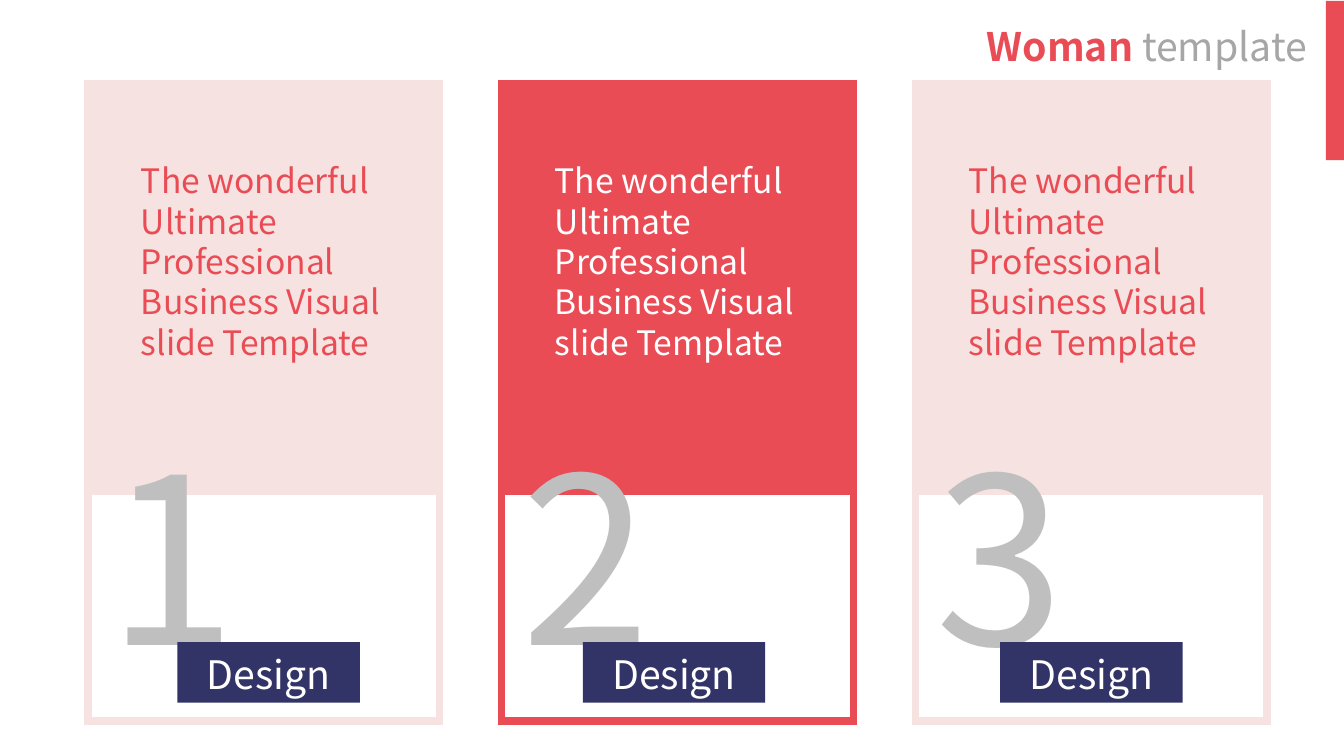
"""Build a slide with three numbered design cards under a two-tone heading."""
from dataclasses import dataclass

import lxml.etree
import pptx
import pptx.dml.color
import pptx.enum.shapes
import pptx.enum.text
import pptx.oxml.ns
import pptx.shapes.autoshape
import pptx.slide
import pptx.text.text
import pptx.util
from pptx.dml.color import RGBColor
from pptx.util import Inches

FONT = "Noto Sans CJK JP"
CORAL = RGBColor(0xEA, 0x4C, 0x55)
BLUSH = RGBColor(0xF6, 0xE2, 0xE0)
NAVY = RGBColor(0x32, 0x33, 0x66)
WHITE = RGBColor(0xFF, 0xFF, 0xFF)
SILVER = RGBColor(0xBF, 0xBF, 0xBF)
GRAY = RGBColor(0xA6, 0xA6, 0xA6)

LEFT_ALIGN = pptx.enum.text.PP_ALIGN.LEFT
CENTER_ALIGN = pptx.enum.text.PP_ALIGN.CENTER
RIGHT_ALIGN = pptx.enum.text.PP_ALIGN.RIGHT

FIRST_CARD_LEFT = 0.87
CARD_PITCH = 4.105
CARD_WIDTH = 3.49
BORDER_POINTS = 5.5
BODY = "The wonderful Ultimate Professional Business Visual slide Template"


@dataclass(frozen=True)
class Area:
    left: float
    top: float
    width: float
    height: float


@dataclass(frozen=True)
class Span:
    text: str
    size: float
    color: RGBColor
    bold: bool = False


@dataclass(frozen=True)
class Card:
    number: str
    panel_color: RGBColor
    body_color: RGBColor
    label_left: float


CARDS = [
    Card("1", BLUSH, CORAL, 1.76),
    Card("2", CORAL, WHITE, 5.78),
    Card("3", BLUSH, CORAL, 9.92),
]


def write(frame: pptx.text.text.TextFrame, spans: list[Span],
          align: pptx.enum.text.PP_ALIGN, wrap: bool) -> None:
    frame.word_wrap = wrap
    frame.auto_size = pptx.enum.text.MSO_AUTO_SIZE.SHAPE_TO_FIT_TEXT
    para = frame.paragraphs[0]
    para.alignment = align
    for span in spans:
        run = para.add_run()
        run.text = span.text
        run.font.name = FONT
        run.font.size = pptx.util.Pt(span.size)
        run.font.bold = span.bold
        run.font.color.rgb = span.color


def add_text(slide: pptx.slide.Slide, area: Area, spans: list[Span],
             align: pptx.enum.text.PP_ALIGN = LEFT_ALIGN, wrap: bool = False) -> None:
    box = slide.shapes.add_textbox(Inches(area.left), Inches(area.top),
                                   Inches(area.width), Inches(area.height))
    write(box.text_frame, spans, align, wrap)


def add_block(slide: pptx.slide.Slide, area: Area, fill: RGBColor,
              border: RGBColor | None = None) -> pptx.shapes.autoshape.Shape:
    block = slide.shapes.add_shape(
        pptx.enum.shapes.MSO_SHAPE.RECTANGLE, Inches(area.left), Inches(area.top),
        Inches(area.width), Inches(area.height))
    block.shadow.inherit = False
    block.fill.solid()
    block.fill.fore_color.rgb = fill
    if border is None:
        block.line.fill.background()
    else:
        block.line.color.rgb = border
        block.line.width = pptx.util.Pt(BORDER_POINTS)
        outline = block.element.spPr.find(pptx.oxml.ns.qn("a:ln"))
        lxml.etree.SubElement(outline, pptx.oxml.ns.qn("a:miter"), lim="800000")
    return block


def add_label(slide: pptx.slide.Slide, left: float) -> None:
    label = add_block(slide, Area(left, 6.37, 1.81, 0.6), NAVY)
    label.text_frame.margin_top = Inches(0.08)
    write(label.text_frame, [Span("Design", 28, WHITE)], CENTER_ALIGN, True)


def add_card(slide: pptx.slide.Slide, card: Card, left: float) -> None:
    add_block(slide, Area(left, 0.83, CARD_WIDTH, 4.02), card.panel_color, card.panel_color)
    add_block(slide, Area(left, 4.87, CARD_WIDTH, 2.28), WHITE, card.panel_color)
    add_text(slide, Area(left + 0.1, 4.05, 1.65, 2.89), [Span(card.number, 166, SILVER)])
    add_label(slide, card.label_left)
    add_text(slide, Area(left + 0.43, 1.54, 2.64, 2.52),
             [Span(BODY, 24, card.body_color)], wrap=True)


def main() -> None:
    deck = pptx.Presentation()
    deck.slide_width = Inches(13.33)
    deck.slide_height = Inches(7.5)
    slide = deck.slides.add_slide(deck.slide_layouts[6])
    for index, card in enumerate(CARDS):
        add_card(slide, card, FIRST_CARD_LEFT + index * CARD_PITCH)
    add_block(slide, Area(13.15, 0.01, 0.18, 1.58), CORAL)
    add_text(slide, Area(9.47, 0.17, 3.59, 0.57),
             [Span("Woman ", 28, CORAL, True), Span("template", 28, GRAY)], RIGHT_ALIGN)
    deck.save("out.pptx")


if __name__ == "__main__":
    main()
